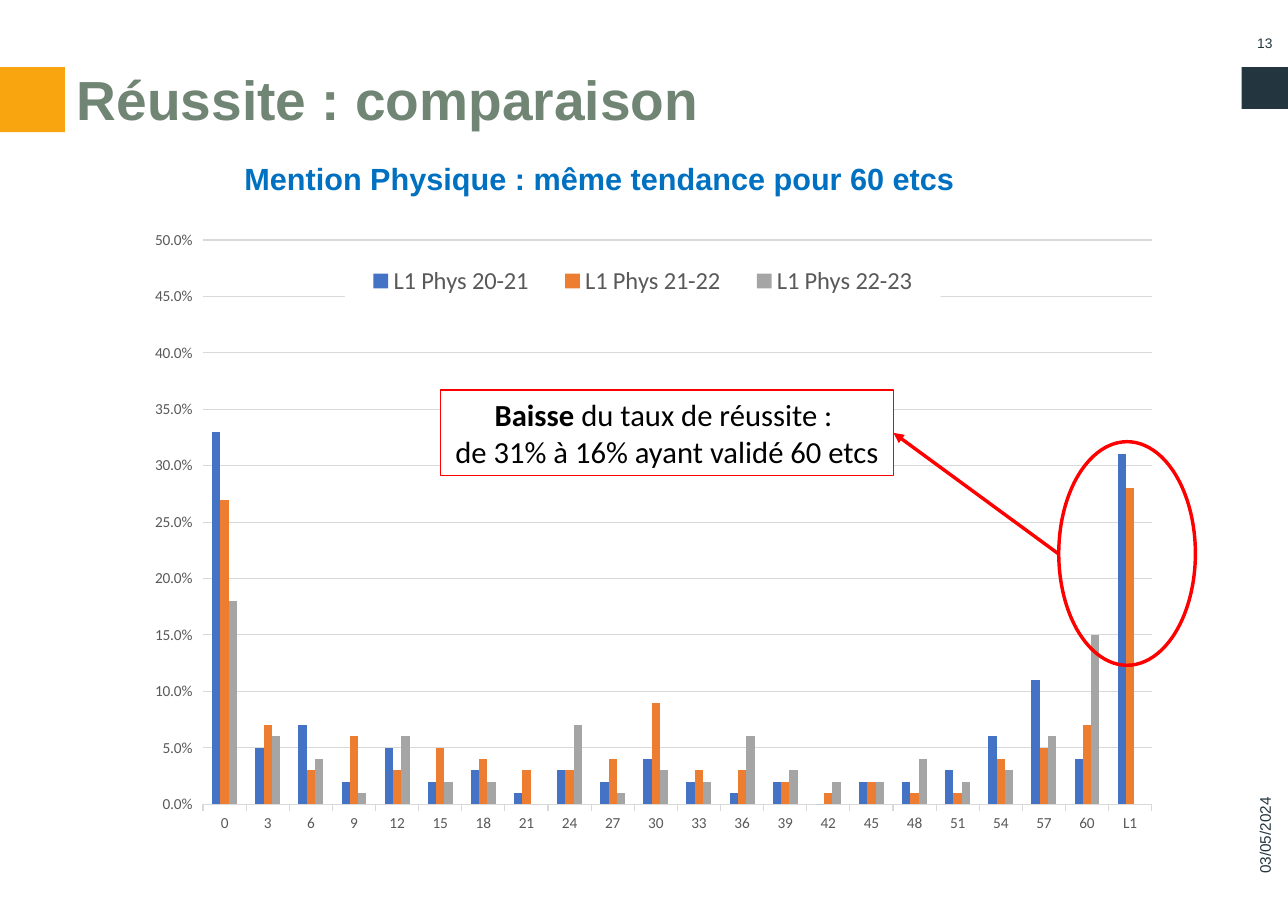
from lxml import etree
from pptx import Presentation
from pptx.chart.data import CategoryChartData
from pptx.dml.color import RGBColor
from pptx.enum import chart as charts, shapes, text
from pptx.oxml import parse_xml
from pptx.oxml.ns import nsdecls, qn
from pptx.util import Inches, Pt

COLORS = {
    "orange": "F9A50F", "dark": "23353E", "sage": "708573", "blue": "0070C0",
    "red": "FF0000", "white": "FFFFFF", "black": "000000",
    "label": "595959", "grid": "D9D9D9",
    "L1 Phys 20-21": "4472C4", "L1 Phys 21-22": "ED7D31", "L1 Phys 22-23": "A5A5A5",
}
RGB = {name: RGBColor.from_string(value) for name, value in COLORS.items()}


def add_label(place, wording, size, color, bold=False, align=text.PP_ALIGN.LEFT):
    box = page.shapes.add_textbox(*map(Inches, place))
    box.text_frame.text = wording
    para = box.text_frame.paragraphs[0]
    para.alignment = align
    font = para.runs[0].font
    font.name, font.size, font.bold = "Arial", Pt(size), bold
    font.color.rgb = RGB[color]
    return box


def chart_layout(x, y, w, h, inner=False):
    target = '<c:layoutTarget val="inner"/>' if inner else ""
    sizes = "".join(f'<c:{tag} val="{val}"/>' for tag, val in zip("xywh", (x, y, w, h)))
    return parse_xml(
        f'<c:layout {nsdecls("c")}><c:manualLayout>{target}'
        f'<c:xMode val="edge"/><c:yMode val="edge"/>{sizes}</c:manualLayout></c:layout>')


deck = Presentation()
deck.slide_width, deck.slide_height = Inches(11.69), Inches(8.27)
page = deck.slides.add_slide(deck.slide_layouts[6])

# Side blocks
for place, color in (((0, 0.61, 0.59, 0.59), "orange"), ((11.27, 0.61, 0.42, 0.38), "dark")):
    block = page.shapes.add_shape(shapes.MSO_SHAPE.RECTANGLE, *map(Inches, place))
    block.shadow.inherit = False
    block.fill.solid()
    block.fill.fore_color.rgb = RGB[color]
    block.line.fill.background()

# Share of students by number of credits
results = {
    "L1 Phys 20-21": [0.33, 0.05, 0.07, 0.02, 0.05, 0.02, 0.03, 0.01, 0.03, 0.02, 0.04,
                      0.02, 0.01, 0.02, 0, 0.02, 0.02, 0.03, 0.06, 0.11, 0.04, 0.31],
    "L1 Phys 21-22": [0.27, 0.07, 0.03, 0.06, 0.03, 0.05, 0.04, 0.03, 0.03, 0.04, 0.09,
                      0.03, 0.03, 0.02, 0.01, 0.02, 0.01, 0.01, 0.04, 0.05, 0.07, 0.28],
    "L1 Phys 22-23": [0.18, 0.06, 0.04, 0.01, 0.06, 0.02, 0.02, 0, 0.07, 0.01, 0.03,
                      0.02, 0.06, 0.03, 0.02, 0.02, 0.04, 0.02, 0.03, 0.06, 0.15, None],
}
data = CategoryChartData(number_format="0.0%")
data.categories = [str(credits) for credits in range(0, 61, 3)] + ["L1"]
for year, shares in results.items():
    data.add_series(year, shares)
chart = page.shapes.add_chart(
    charts.XL_CHART_TYPE.COLUMN_CLUSTERED,
    *map(Inches, (0.84, 1.62, 9.83, 6.42)), data).chart
chart.has_title = False
chart.font.name, chart.font.size = "Calibri", Pt(10)
chart.font.color.rgb = RGB["black"]
plot = chart.plots[0]
plot.gap_width, plot.overlap = 219, 0
plot.vary_by_categories = False
for series in plot.series:
    series.format.fill.solid()
    series.format.fill.fore_color.rgb = RGB[series.name]

# Axes
for axis in (chart.category_axis, chart.value_axis):
    font = axis.tick_labels.font
    font.name, font.size = "Calibri", Pt(10)
    font.color.rgb = RGB["label"]
    axis.major_tick_mark = charts.XL_TICK_MARK.OUTSIDE
chart.category_axis.has_major_gridlines = False
value_axis = chart.value_axis
value_axis.minimum_scale, value_axis.maximum_scale, value_axis.major_unit = 0, 0.5, 0.05
value_axis.tick_labels.number_format = "0.0%"
value_axis.tick_labels.number_format_is_linked = False
value_axis.format.line.fill.background()
for line in (chart.category_axis.format.line, value_axis.major_gridlines.format.line):
    line.color.rgb = RGB["grid"]
    line.width = Pt(0.75)

# Legend over the top of the plot
chart.has_legend = True
legend = chart.legend
legend.position = charts.XL_LEGEND_POSITION.BOTTOM
legend.include_in_layout = False
legend.font.name, legend.font.size = "Calibri", Pt(16)
legend.font.color.rgb = RGB["label"]
plot_area = chart._chartSpace.chart.plotArea
legend_xml = legend._element
for parent in (plot_area, legend_xml):
    for old in parent.findall(qn("c:layout")):
        parent.remove(old)
plot_area.insert(0, chart_layout(0.102, 0.087, 0.876, 0.798, inner=True))
legend_xml.find(qn("c:legendPos")).addnext(chart_layout(0.233, 0.115, 0.55, 0.06))
legend_xml.find(qn("c:overlay")).addnext(parse_xml(
    f'<c:spPr {nsdecls("c", "a")}><a:solidFill><a:srgbClr val="{COLORS["white"]}"/>'
    '</a:solidFill></c:spPr>'))

# Title, subtitle, page number and date
title = add_label((0.6, 0.61, 10.25, 1.32), "Réussite : comparaison", 36, "sage", True)
title.text_frame.word_wrap = True
title.text_frame.paragraphs[0].line_spacing = 0.9
add_label((2.12, 1.4, 6.77, 0.44), "Mention Physique : même tendance pour 60 etcs",
          20, "blue", True)
number = add_label((11.27, 0.17, 0.42, 0.44), "13", 9, "dark", align=text.PP_ALIGN.CENTER)
date = add_label((10.99, 7.41, 0.98, 0.42), "03/05/2024", 10, "dark", align=text.PP_ALIGN.RIGHT)
date.rotation = 270
for box in (number, date):
    frame = box.text_frame
    frame.vertical_anchor = text.MSO_ANCHOR.MIDDLE
    frame.margin_left = frame.margin_right = Inches(0.11)
    frame.margin_top = frame.margin_bottom = Inches(0.06)

# Circled result and its comment
circle = page.shapes.add_shape(shapes.MSO_SHAPE.OVAL, *map(Inches, (9.61, 4.01, 1.24, 2.03)))
circle.fill.background()
comment = page.shapes.add_shape(
    shapes.MSO_SHAPE.RECTANGLE, *map(Inches, (4, 3.54, 4.11, 0.78)))
comment.fill.solid()
comment.fill.fore_color.rgb = RGB["white"]
for shape, width in ((circle, 2.25), (comment, 0.75)):
    shape.shadow.inherit = False
    shape.line.color.rgb = RGB["red"]
    shape.line.width = Pt(width)
frame = comment.text_frame
frame.word_wrap = True
frame.text = "Baisse\nde 31% à 16% ayant validé 60 etcs"
frame.paragraphs[0].add_run().text = " du taux de réussite : "
for para in frame.paragraphs:
    para.alignment = text.PP_ALIGN.CENTER
    for span in para.runs:
        span.font.name, span.font.size = "Calibri", Pt(20)
        span.font.bold = span.text == "Baisse"
        span.font.color.rgb = RGB["black"]

# Arrow pointing at the comment
arrow = page.shapes.add_connector(
    shapes.MSO_CONNECTOR.STRAIGHT, *map(Inches, (8.11, 3.94, 9.61, 5.03)))
arrow.begin_connect(comment, 3)
arrow.line.color.rgb = RGB["red"]
arrow.line.width = Pt(2.25)
etree.SubElement(arrow.line._get_or_add_ln(), qn("a:headEnd"), type="triangle")
etree.SubElement(arrow._element.spPr, qn("a:effectLst"))

deck.save("out.pptx")
